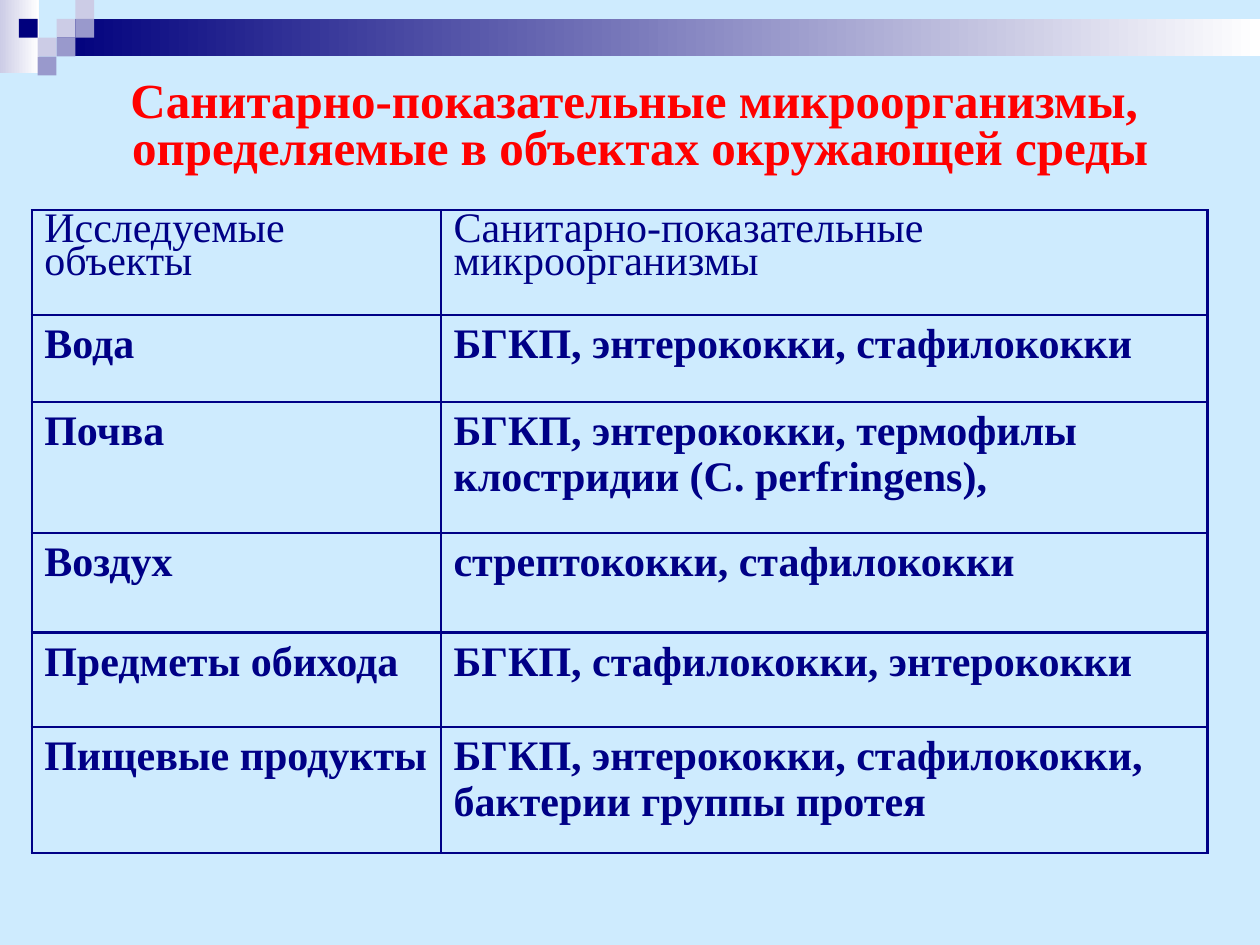
from lxml import etree
from pptx import Presentation
from pptx import util as u
from pptx.dml import color
from pptx.enum import shapes, text
from pptx.oxml import ns

NAVY, LILAC, MAUVE, WHITE = "000086", "CCCCE6", "9999CC", "FFFFFF"
TITLE = "Санитарно-показательные микроорганизмы, \nопределяемые в объектах окружающей среды"
ROWS = [
    (2.11, "Исследуемые\nобъекты", "Санитарно-показательные\nмикроорганизмы"),
    (1.75, "Вода", "БГКП, энтерококки, стафилококки"),
    (2.64, "Почва", "БГКП, энтерококки, термофилы\nклостридии (С. perfringens),"),
    (2.01, "Воздух", "стрептококки, стафилококки"),
    (1.9, "Предметы обихода", "БГКП, стафилококки, энтерококки"),
    (2.54, "Пищевые продукты", "БГКП, энтерококки, стафилококки, бактерии группы протея"),
]
COLS = [8.25, 15.45]
STEP = 0.38
BARS = [(0, 0, 0.78, 1.47, LILAC), (3 * STEP, STEP, 25.4 - 3 * STEP, 2 * STEP, "00007D")]
TILES = [(3, 1, LILAC), (4, 0, LILAC), (4, 1, MAUVE), (2, 2, LILAC),
         (1, 1, "00007D"), (3, 2, MAUVE), (2, 3, MAUVE)]


def rgb(code):
    return color.RGBColor.from_string(code)


def write(frame, words, size=24, tint=NAVY, bold=True, gap=None, align=None):
    frame.text = words
    for para in frame.paragraphs:
        para.alignment = align
        para.line_spacing = gap
        for run in para.runs:
            font = run.font
            font.name, font.size, font.bold = "Times New Roman", u.Pt(size), bold
            font.color.rgb = rgb(tint)


def block(slide, left, top, wide, high, tint, fade=None):
    box = slide.shapes.add_shape(
        shapes.MSO_SHAPE.RECTANGLE, *map(u.Cm, (left, top, wide, high)))
    box.shadow.inherit = False
    box.line.fill.background()
    if fade:
        box.fill.gradient()
        box.fill.gradient_angle = 0
        for stop, code in zip(box.fill.gradient_stops, (tint, fade)):
            stop.color.rgb = rgb(code)
    else:
        box.fill.solid()
        box.fill.fore_color.rgb = rgb(tint)


def frame_cell(cell):
    props = cell._tc.get_or_add_tcPr()
    for side in ("lnL", "lnR", "lnT", "lnB"):
        line = etree.SubElement(props, ns.qn("a:" + side), w=str(u.Pt(1.5)))
        fill = etree.SubElement(line, ns.qn("a:solidFill"))
        etree.SubElement(fill, ns.qn("a:srgbClr"), val=NAVY)
    cell.fill.background()


def add_grid(slide):
    high = sum(row[0] for row in ROWS)
    grid = slide.shapes.add_table(
        len(ROWS), len(COLS), *map(u.Cm, (0.64, 4.24, sum(COLS), high))).table
    grid.first_row = grid.horz_banding = False
    for col, wide in zip(grid.columns, COLS):
        col.width = u.Cm(wide)
    for r, (tall, *words) in enumerate(ROWS):
        grid.rows[r].height = u.Cm(tall)
        for c, word in enumerate(words):
            cell = grid.cell(r, c)
            write(cell.text_frame, word, bold=r > 0, gap=None if r else 0.7)
            frame_cell(cell)


def main():
    deck = Presentation()
    deck.slide_width, deck.slide_height = u.Cm(25.4), u.Cm(19.05)
    slide = deck.slides.add_slide(deck.slide_layouts[5])
    slide.background.fill.solid()
    slide.background.fill.fore_color.rgb = rgb("CEEBFE")
    for bar in BARS:
        block(slide, *bar, fade=WHITE)
    for col, row, tint in TILES:
        block(slide, col * STEP, row * STEP, STEP, STEP, tint)
    title = slide.shapes.title
    title.left, title.top, title.width, title.height = map(u.Cm, (2.34, 1.5, 21.13, 2.16))
    frame = title.text_frame
    frame.word_wrap = False
    frame.auto_size = text.MSO_AUTO_SIZE.SHAPE_TO_FIT_TEXT
    frame.vertical_anchor = text.MSO_ANCHOR.MIDDLE
    write(frame, TITLE, size=28, tint="FF0000", gap=0.8, align=text.PP_ALIGN.CENTER)
    add_grid(slide)
    deck.save("out.pptx")


if __name__ == "__main__":
    main()
